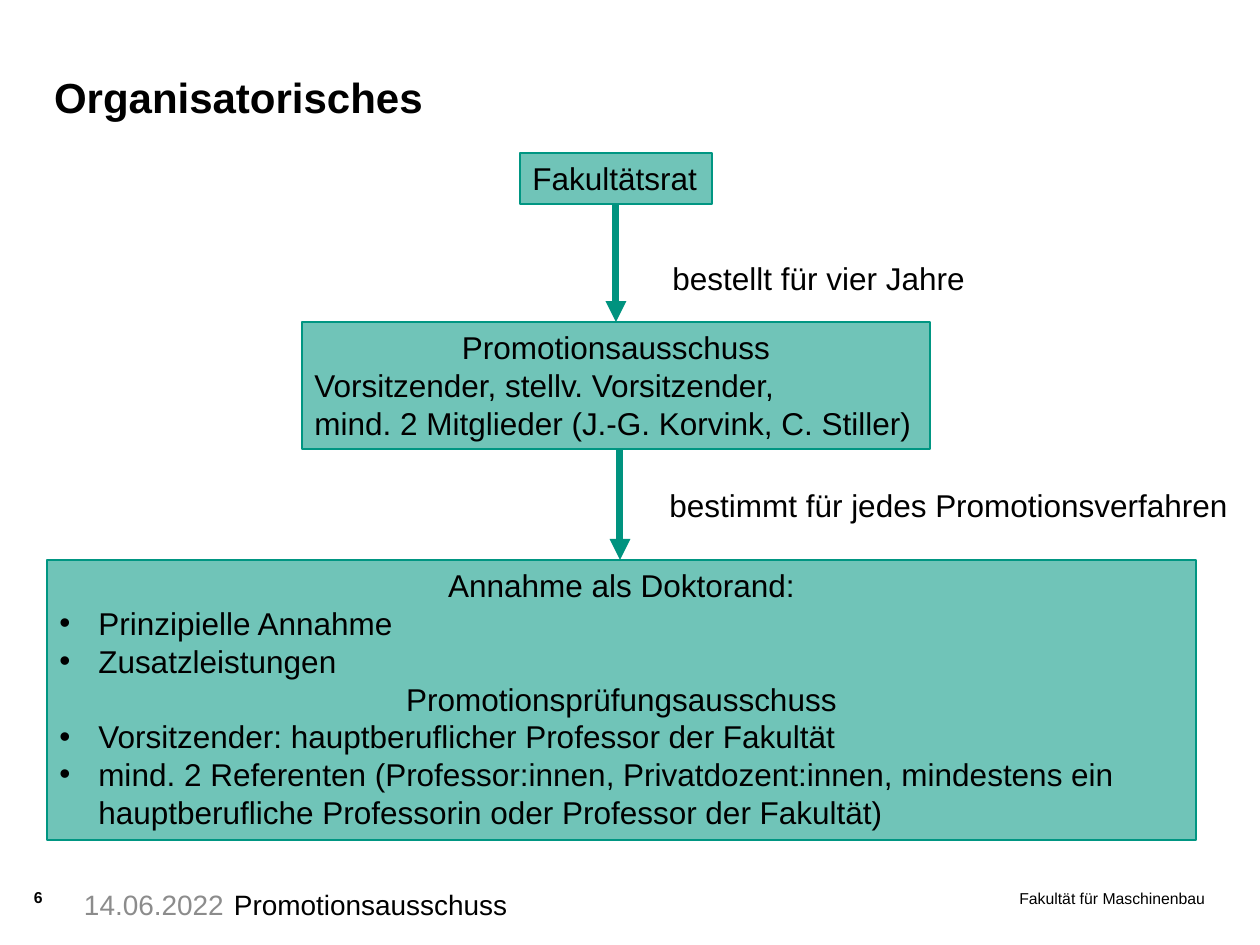
"""Build the slide on how the doctoral committees are organised."""
from lxml import etree
from pptx import Presentation, util as u
from pptx.dml.color import RGBColor
from pptx.enum import shapes, text
from pptx.oxml.ns import qn

HUE = {"ink": "000000", "date": "8C8C8C", "box": "009682", "arrow": "00937F"}
UNIT = 914400 / 126
LEFT, MID, RIGHT = text.PP_ALIGN.LEFT, text.PP_ALIGN.CENTER, text.PP_ALIGN.RIGHT


def px(*vals):
    return [u.Emu(round(v * UNIT)) for v in vals]


def write(shape, lines, size=18, bold=False, hue="ink", align=LEFT, inset=None,
          wrap=True, grow=False, anchor=text.MSO_ANCHOR.TOP):
    frame = shape.text_frame
    frame.word_wrap = wrap
    frame.vertical_anchor = anchor
    fit = text.MSO_AUTO_SIZE
    frame.auto_size = fit.SHAPE_TO_FIT_TEXT if grow else fit.NONE
    if inset is not None:
        frame.margin_left = frame.margin_right = inset
        frame.margin_top = frame.margin_bottom = inset
    for i, (kind, line) in enumerate(lines):
        para = frame.paragraphs[0] if i == 0 else frame.add_paragraph()
        para.text = line
        para.alignment = MID if kind == "head" else align
        if kind == "item":
            prop = para._p.get_or_add_pPr()
            prop.set("marL", str(px(39)[0]))
            prop.set("indent", str(px(-39)[0]))
            etree.SubElement(prop, qn("a:buFont"), typeface="Arial")
            etree.SubElement(prop, qn("a:buChar"), char="•")
        para.font.name = "Arial"
        para.font.size = u.Pt(size)
        para.font.bold = bold
        para.font.color.rgb = RGBColor.from_string(HUE[hue])


deck = Presentation()
deck.slide_width, deck.slide_height = px(1260, 945)
slide = deck.slides.add_slide(deck.slide_layouts[6])
draw = slide.shapes

plain = [
    ((828, 889, 377, 49), "Fakultät für Maschinenbau", dict(size=9, align=RIGHT, inset=0)),
    ((34, 888, 45, 30), "6", dict(size=9, bold=True, inset=0)),
    ((54, 45, 953, 77), "Organisatorisches",
     dict(size=24, bold=True, inset=0, anchor=text.MSO_ANCHOR.BOTTOM)),
    ((234, 888, 586, 49), "Promotionsausschuss", dict(size=16, inset=0)),
    ((84, 888, 144, 49), "14.06.2022", dict(size=16, hue="date", inset=0)),
    ((660, 253, 320, 51), "bestellt für vier Jahre", dict(wrap=False, grow=True)),
    ((657, 480, 590, 51), "bestimmt für jedes Promotionsverfahren",
     dict(wrap=False, grow=True)),
]
for place, words, style in plain:
    write(draw.add_textbox(*px(*place)), [("text", words)], **style)

stages = [
    ((520, 153, 192, 51), False, [("text", "Fakultätsrat")]),
    ((302, 322, 628, 127), False, [
        ("head", "Promotionsausschuss"),
        ("text", "Vorsitzender, stellv. Vorsitzender,"),
        ("text", "mind. 2 Mitglieder (J.-G. Korvink, C. Stiller)")]),
    ((47, 560, 1149, 280), True, [
        ("head", "Annahme als Doktorand:"),
        ("item", "Prinzipielle Annahme"),
        ("item", "Zusatzleistungen"),
        ("head", "Promotionsprüfungsausschuss"),
        ("item", "Vorsitzender: hauptberuflicher Professor der Fakultät"),
        ("item", "mind. 2 Referenten (Professor:innen, Privatdozent:innen, mindestens ein "
                 "hauptberufliche Professorin oder Professor der Fakultät)")]),
]
boxes = []
for place, wrap, lines in stages:
    box = draw.add_shape(shapes.MSO_SHAPE.RECTANGLE, *px(*place))
    box.shadow.inherit = False
    box.fill.solid()
    box.fill.fore_color.rgb = RGBColor.from_string(HUE["box"])
    tint = box._element.spPr.find(qn("a:solidFill")).find(qn("a:srgbClr"))
    etree.SubElement(tint, qn("a:alpha"), val="56000")
    box.line.color.rgb = RGBColor.from_string(HUE["box"])
    box.line.width = u.Pt(0.75)
    write(box, lines, wrap=wrap, grow=True)
    boxes.append(box)

arrows = []
for x, top, end in [(616, 204, 322), (620, 449, 560)]:
    arrow = draw.add_connector(shapes.MSO_CONNECTOR.STRAIGHT, *px(x, top, x, end))
    arrow.line.color.rgb = RGBColor.from_string(HUE["arrow"])
    arrow.line.width = u.Pt(4)
    etree.SubElement(arrow.line._get_or_add_ln(), qn("a:tailEnd"), type="triangle")
    etree.SubElement(arrow._element.spPr, qn("a:effectLst"))
    arrows.append(arrow)
arrows[0].begin_connect(boxes[0], 2)
arrows[0].end_connect(boxes[1], 0)

deck.save("out.pptx")
